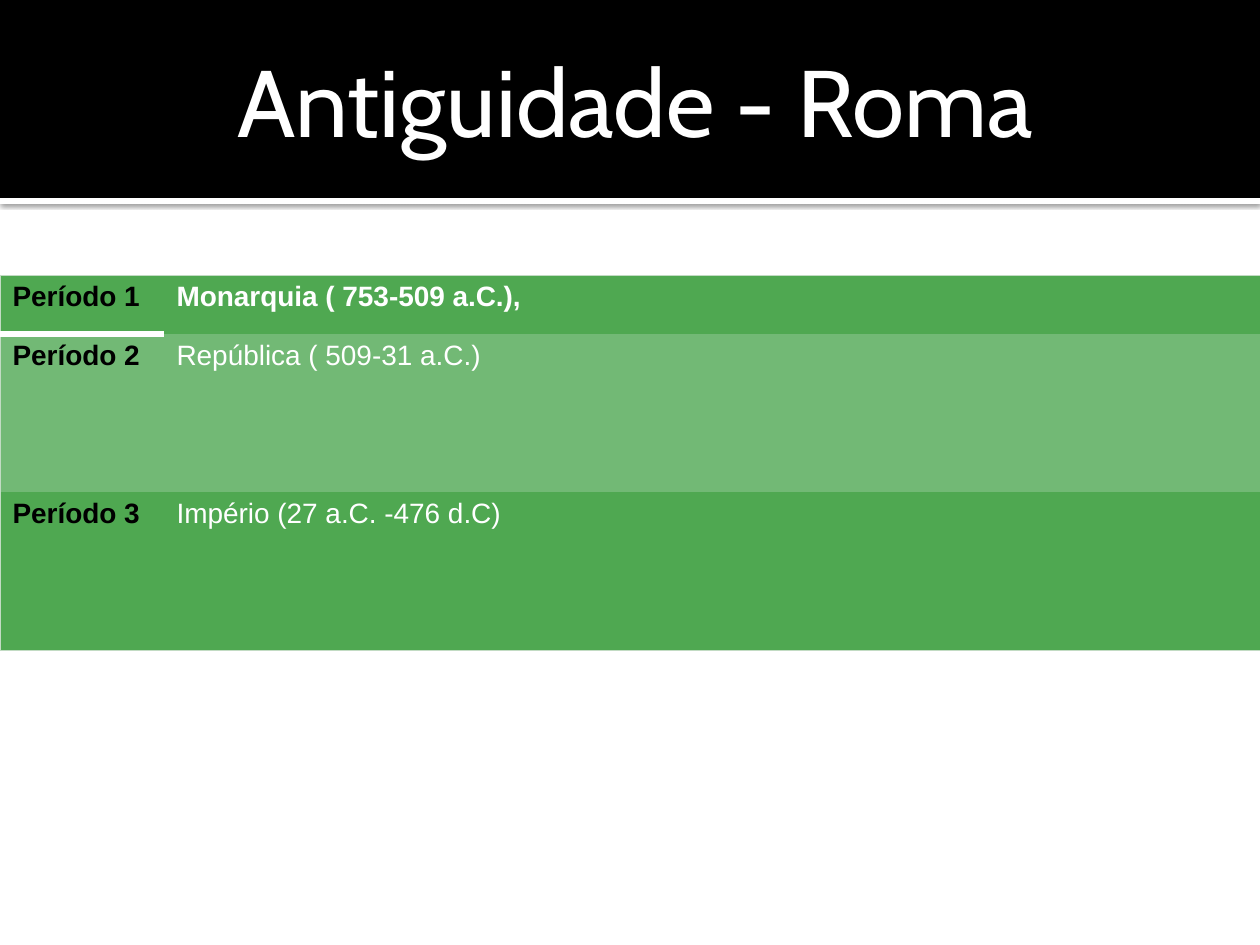
from lxml.etree import SubElement
from pptx import Presentation
from pptx.dml.color import RGBColor
from pptx.enum.shapes import MSO_SHAPE
from pptx.enum.text import MSO_AUTO_SIZE, PP_ALIGN
from pptx.oxml import parse_xml
from pptx.oxml.ns import nsdecls, qn
from pptx.util import Emu, Pt

WHITE = RGBColor(0xFF, 0xFF, 0xFF)
BLACK = RGBColor(0, 0, 0)
GREEN = RGBColor(0x4F, 0xA8, 0x51)
LIGHT = RGBColor(0x72, 0xB9, 0x75)
PALE = RGBColor(0xC2, 0xDB, 0xC3)
SCALE = 914400 / 126
WIDE, HIGH = 1260, 945
HEAD, STRIP = 198, 6

PERIODS = [
    ("Período 1", "Monarquia ( 753-509 a.C.),"),
    ("Período 2", "República ( 509-31 a.C.)"),
    ("Período 3", "Império (27 a.C. -476 d.C)"),
]


def px(size):
    return Emu(round(size * SCALE))


class Deck:
    font = "Arial"
    size = 16

    def __init__(self):
        self.show = Presentation()
        self.show.slide_width, self.show.slide_height = px(WIDE), px(HIGH)
        self.slide = self.show.slides.add_slide(self.show.slide_layouts[6])

    def style(self, frame, color, bold=False, font=None, size=None):
        for run in frame.paragraphs[0].runs:
            run.font.name = font or self.font
            run.font.size = Pt(size or self.size)
            run.font.bold = bold
            run.font.color.rgb = color

    def bar(self, top, high, color):
        bar = self.slide.shapes.add_shape(
            MSO_SHAPE.RECTANGLE, px(0), px(top), px(WIDE), px(high))
        bar.shadow.inherit = False
        bar.fill.solid()
        bar.fill.fore_color.rgb = color
        bar.line.fill.background()
        return bar

    def shade(self, shape):
        effects = shape.element.spPr.find(qn("a:effectLst"))
        effects.append(parse_xml(
            f'<a:outerShdw {nsdecls("a")} blurRad="{Pt(2.5)}" dist="{Pt(0.8)}" '
            'dir="5400000" algn="t" rotWithShape="0"><a:srgbClr val="000000">'
            '<a:alpha val="60000"/></a:srgbClr></a:outerShdw>'))

    def title(self, text, left, top, wide, high):
        box = self.slide.shapes.add_textbox(px(left), px(top), px(wide), px(high))
        frame = box.text_frame
        frame.text = text
        frame.word_wrap = False
        frame.auto_size = MSO_AUTO_SIZE.SHAPE_TO_FIT_TEXT
        frame.paragraphs[0].alignment = PP_ALIGN.CENTER
        self.style(frame, WHITE, font="Cabin", size=54)

    def edge(self, cell, side, look):
        line = SubElement(cell._tc.get_or_add_tcPr(), qn(f"a:ln{side}"))
        if look is None:
            SubElement(line, qn("a:noFill"))
            return
        color, width = look
        line.set("w", str(Pt(width)))
        fill = SubElement(line, qn("a:solidFill"))
        SubElement(fill, qn("a:srgbClr")).set("val", str(color))

    def table(self, data, top, cols, rows):
        grid = self.slide.shapes.add_table(
            len(rows), len(cols), px(0), px(top), px(sum(cols)), px(sum(rows))).table
        grid.first_row = grid.horz_banding = False
        for part, size in zip(grid.columns, cols):
            part.width = px(size)
        for part, size in zip(grid.rows, rows):
            part.height = px(size)
        thin, thick = (PALE, 0.5), (WHITE, 3.82)
        last, end = len(rows) - 1, len(cols) - 1
        for r, texts in enumerate(data):
            for c, text in enumerate(texts):
                cell = grid.cell(r, c)
                cell.text_frame.text = text
                self.style(cell.text_frame, WHITE if c else BLACK,
                           bold=c == 0 or r == 0)
                rule = thick if c == 0 else None
                self.edge(cell, "L", thin if c == 0 else None)
                self.edge(cell, "R", thin if c == end else None)
                self.edge(cell, "T", {0: thin, 1: rule}.get(r))
                self.edge(cell, "B", {0: rule, last: thin}.get(r))
                cell.fill.solid()
                cell.fill.fore_color.rgb = LIGHT if r % 2 else GREEN


def main():
    deck = Deck()
    deck.shade(deck.bar(HEAD, STRIP, WHITE))
    deck.bar(0, HEAD, BLACK)
    deck.table(PERIODS, 275, [164, 1096], [59, 158, 158])
    deck.title("Antiguidade - Roma", 220, 37, 830, 127)
    deck.show.save("out.pptx")


if __name__ == "__main__":
    main()
